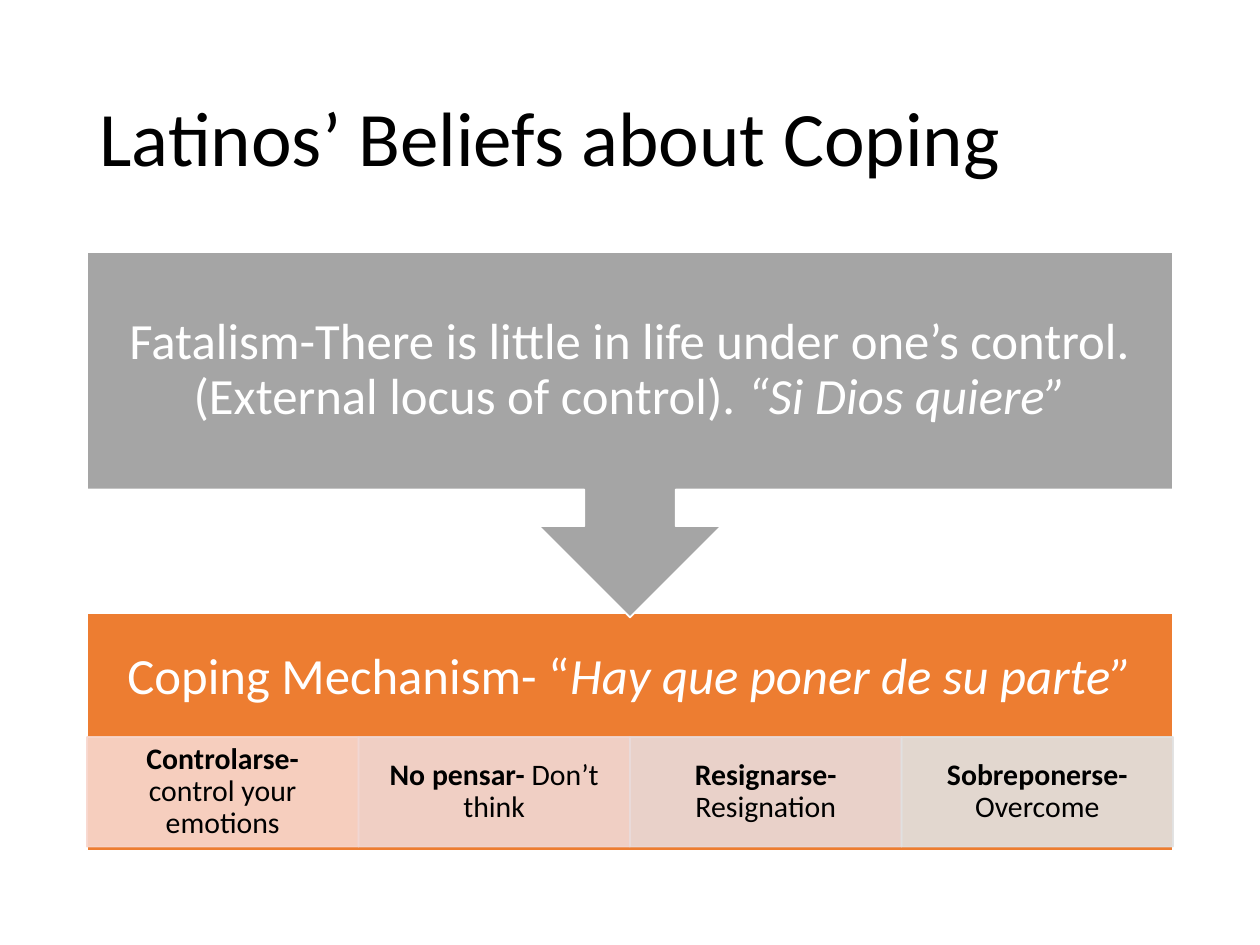
from lxml import etree
from pptx import Presentation
from pptx.dml.color import RGBColor
from pptx.enum.shapes import MSO_SHAPE
from pptx.enum.text import MSO_ANCHOR, MSO_AUTO_SIZE, PP_ALIGN
from pptx.oxml.ns import qn
from pptx.util import Inches, Pt

RECTANGLE = MSO_SHAPE.RECTANGLE
ARROW_CALLOUT = MSO_SHAPE.UP_ARROW_CALLOUT
MIDDLE = MSO_ANCHOR.MIDDLE
LEFT, CENTER = PP_ALIGN.LEFT, PP_ALIGN.CENTER
NO_AUTOFIT = MSO_AUTO_SIZE.NONE

FONT = "Calibri"
COLORS = {
    "black": "000000",
    "white": "FFFFFF",
    "fatalism": "A5A5A5",
    "coping": "ED7D31",
}
STRATEGIES = [
    ("Controlarse- ", "control your emotions", "F8D7CE"),
    ("No pensar- ", "Don’t think", "F1D8D4"),
    ("Resignarse- ", "Resignation", "E9DBDA"),
    ("Sobreponerse- ", "Overcome", "E1E1E1"),
]
MARGIN = 0.69
CONTENT_WIDTH = 8.62
STRATEGY_WIDTH = CONTENT_WIDTH / len(STRATEGIES)


def set_text(shape, runs, size, color, insets=(0.1, 0.05), alignment=CENTER):
    frame = shape.text_frame
    frame.word_wrap = True
    frame.auto_size = NO_AUTOFIT
    frame.vertical_anchor = MIDDLE
    frame.margin_left = frame.margin_right = Inches(insets[0])
    frame.margin_top = frame.margin_bottom = Inches(insets[1])
    paragraph = frame.paragraphs[0]
    paragraph.alignment = alignment
    paragraph.line_spacing = 0.9
    for text, bold, italic in runs:
        run = paragraph.add_run()
        run.text = text
        run.font.name = FONT
        run.font.size = Pt(size)
        run.font.bold = bold
        run.font.italic = italic
        run.font.color.rgb = RGBColor.from_string(color)


def set_opacity(shape, percent):
    for color in shape._element.spPr.iter(qn("a:srgbClr")):
        etree.SubElement(color, qn("a:alpha"), val=str(percent * 1000))


def add_block(slide, kind, box, fill, line):
    shape = slide.shapes.add_shape(kind, *map(Inches, box))
    shape.shadow.inherit = False
    shape.fill.solid()
    shape.fill.fore_color.rgb = RGBColor.from_string(fill)
    shape.line.color.rgb = RGBColor.from_string(line)
    shape.line.width = Pt(1)
    return shape


def add_heading(slide, top, height, plain, italic):
    box = slide.shapes.add_textbox(
        Inches(MARGIN), Inches(top), Inches(CONTENT_WIDTH), Inches(height)
    )
    runs = [(plain, False, False), (italic, False, True)]
    set_text(box, runs, 29, COLORS["white"], (0.23, 0.23))


def add_title(slide, text):
    title = slide.shapes.title
    title.left, title.top = Inches(MARGIN), Inches(0.4)
    title.width, title.height = Inches(CONTENT_WIDTH), Inches(1.45)
    set_text(title, [(text, False, False)], 44, COLORS["black"], alignment=LEFT)


def add_strategy(slide, index, term, meaning, color):
    left = MARGIN + index * STRATEGY_WIDTH
    cell = add_block(
        slide, RECTANGLE, (left, 5.85, STRATEGY_WIDTH, 0.87), color, color
    )
    set_opacity(cell, 90)
    runs = [(term, True, False), (meaning, False, False)]
    set_text(cell, runs, 17, COLORS["black"], (0.13, 0.02))


def add_coping(slide):
    box = (MARGIN, 4.87, CONTENT_WIDTH, 1.88)
    add_block(slide, RECTANGLE, box, COLORS["coping"], COLORS["white"])
    add_heading(
        slide, 4.87, 1.02, "Coping Mechanism- “", "Hay que poner de su parte”"
    )
    for index, strategy in enumerate(STRATEGIES):
        add_strategy(slide, index, *strategy)


def add_fatalism(slide):
    box = (MARGIN, 2, CONTENT_WIDTH, 2.9)
    callout = add_block(
        slide, ARROW_CALLOUT, box, COLORS["fatalism"], COLORS["white"]
    )
    callout.rotation = 180
    add_heading(
        slide,
        2,
        1.88,
        "Fatalism-There is little in life under one’s control. "
        "(External locus of control). ",
        "“Si Dios quiere”",
    )


def main():
    presentation = Presentation()
    presentation.slide_width = Inches(10)
    presentation.slide_height = Inches(7.5)
    slide = presentation.slides.add_slide(presentation.slide_layouts[5])
    add_title(slide, "Latinos’ Beliefs about Coping")
    add_coping(slide)
    add_fatalism(slide)
    presentation.save("out.pptx")


if __name__ == "__main__":
    main()
